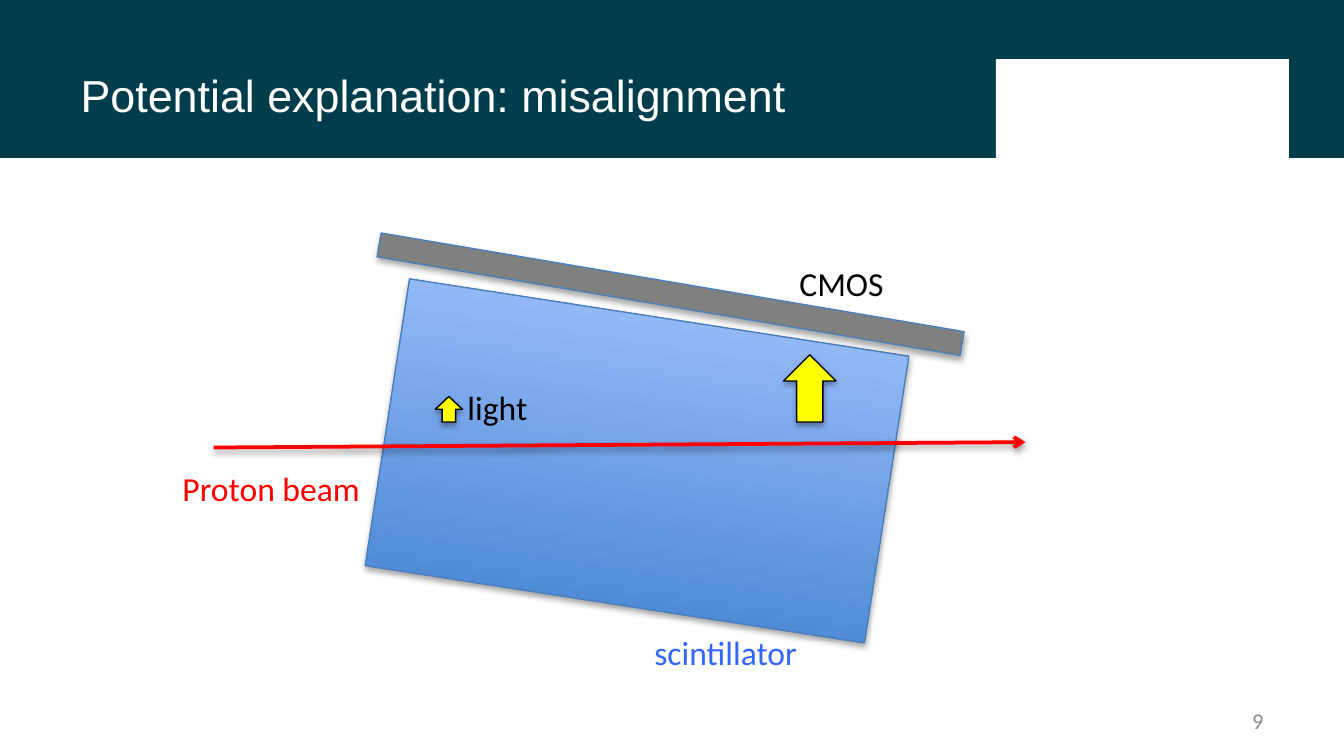
from dataclasses import dataclass

from lxml.etree import SubElement as Sub
from pptx import Presentation as Deck
from pptx.dml.color import RGBColor as Rgb
from pptx.enum.shapes import MSO_CONNECTOR as Link, MSO_SHAPE as Form
from pptx.enum.text import MSO_ANCHOR as Anchor, MSO_AUTO_SIZE as Fit, PP_ALIGN as Align
from pptx.oxml.ns import qn
from pptx.util import Inches, Pt


@dataclass(frozen=True)
class Theme:
    teal: str = "003D4C"
    white: str = "FFFFFF"
    black: str = "000000"
    grey: str = "808080"
    pale: str = "8C8C8C"
    edge: str = "4B7EBC"
    deep: str = "3F80CE"
    sky: str = "A4C4FF"
    blue: str = "3366FF"
    red: str = "FF0000"
    gold: str = "FFFF00"
    head: str = "Arial"
    body: str = "Calibri"
    title: int = 24
    label: int = 18
    small: int = 12


LOOK = Theme()
CELL = 0.1
COLS, ROWS = 100, 56.25


def rgb(code):
    return Rgb.from_string(code)


def grid(count):
    return Inches(count * CELL)


def place(box, x, y, w, h):
    return [grid(n) for n in (box[0] + x, box[1] + y, w, h)]


def write(shape, text, size=LOOK.label, font=LOOK.body, color=LOOK.black,
          align=Align.LEFT, anchor=Anchor.TOP, wrap=False):
    frame = shape.text_frame
    frame.text = text
    frame.word_wrap = wrap
    frame.auto_size = Fit.NONE if wrap else Fit.SHAPE_TO_FIT_TEXT
    frame.vertical_anchor = anchor
    line = frame.paragraphs[0]
    line.alignment = align
    line.font.size, line.font.name = Pt(size), font
    line.font.color.rgb = rgb(color)


def shade(props, alpha, dist):
    glow = props.find(qn("a:effectLst"))
    if glow is None:
        glow = Sub(props, qn("a:effectLst"))
    drop = Sub(glow, qn("a:outerShdw"), blurRad=str(Pt(3.1)), dist=str(Pt(dist)),
               dir="5400000", rotWithShape="0")
    tint = Sub(drop, qn("a:srgbClr"), val=LOOK.black)
    Sub(tint, qn("a:alpha"), val=str(alpha * 1000))


def block(slide, form, spot, fill, line=None, turn=0):
    shape = slide.shapes.add_shape(form, *spot)
    shape.rotation = turn
    shape.shadow.inherit = False
    if isinstance(fill, tuple):
        shape.fill.gradient()
        shape.fill.gradient_angle = 90
        for stop, code in zip(shape.fill.gradient_stops, fill):
            stop.color.rgb = rgb(code)
    else:
        shape.fill.solid()
        shape.fill.fore_color.rgb = rgb(fill)
    if line:
        shape.line.color.rgb = rgb(line)
        shape.line.width = Pt(0.75)
        shade(shape._element.spPr, 35, 1.8)
    else:
        shape.line.fill.background()
    return shape


def banner(slide, box):
    band = block(slide, Form.RECTANGLE, place(box, 0, 0, *box[2:]), LOOK.teal)
    mark = block(slide, Form.RECTANGLE, place(box, 74.1, 4.4, 21.8, box[3] - 4.4),
                 LOOK.white)
    title = slide.shapes.title
    title.left, title.top, title.width, title.height = place(box, 5, 2.3, 62.7, 9.4)
    write(title, "Potential explanation: misalignment", size=LOOK.title,
          font=LOOK.head, color=LOOK.white, anchor=Anchor.MIDDLE, wrap=True)
    for shape in (mark, band):
        slide.shapes._spTree.insert(2, shape._element)


def beam(slide, box, start, end):
    ends = [grid(box[i] + spot[i]) for spot in (start, end) for i in (0, 1)]
    ray = slide.shapes.add_connector(Link.STRAIGHT, *ends)
    ray.line.color.rgb = rgb(LOOK.red)
    ray.line.width = Pt(2)
    Sub(ray.line._get_or_add_ln(), qn("a:tailEnd"), type="arrow")
    shade(ray._element.spPr, 38, 1.6)


def scene(slide, box):
    block(slide, Form.RECTANGLE, place(box, 18.6, 8.5, 37.6, 21.6),
          (LOOK.deep, LOOK.sky), LOOK.edge, turn=8.8)
    beam(slide, box, (5.9, 18.3), (66.3, 17.9))
    for spot in ((22.4, 14.5, 2, 1.9), (48.3, 11.4, 3.9, 5)):
        block(slide, Form.UP_ARROW, place(box, *spot), LOOK.gold, LOOK.black)
    block(slide, Form.RECTANGLE, place(box, 17.9, 6, 44, 1.8),
          LOOK.grey, LOOK.edge, turn=9.6)
    labels = (
        ("CMOS", 48.5, 4.1, 8.4, LOOK.black),
        ("Proton beam", 2.6, 19.3, 15.4, LOOK.red),
        ("light", 23.8, 13.3, 6.5, LOOK.black),
        ("scintillator", 37.7, 31.5, 12.8, LOOK.blue),
    )
    for text, x, y, w, color in labels:
        write(slide.shapes.add_textbox(*place(box, x, y, w, 4)), text, color=color)


def footer(slide, box):
    note = slide.shapes.add_textbox(*place(box, 71.7, 0, 23.3, box[3]))
    write(note, "9", size=LOOK.small, color=LOOK.pale, align=Align.RIGHT,
          anchor=Anchor.MIDDLE, wrap=True)


def main():
    deck = Deck()
    deck.slide_width, deck.slide_height = grid(COLS), grid(ROWS)
    slide = deck.slides.add_slide(deck.slide_layouts[5])
    banner(slide, (0, 0, COLS, 11.75))
    scene(slide, (10, 15, 70, 36))
    footer(slide, (0, 52.1, COLS, 3))
    deck.save("out.pptx")


if __name__ == "__main__":
    main()
